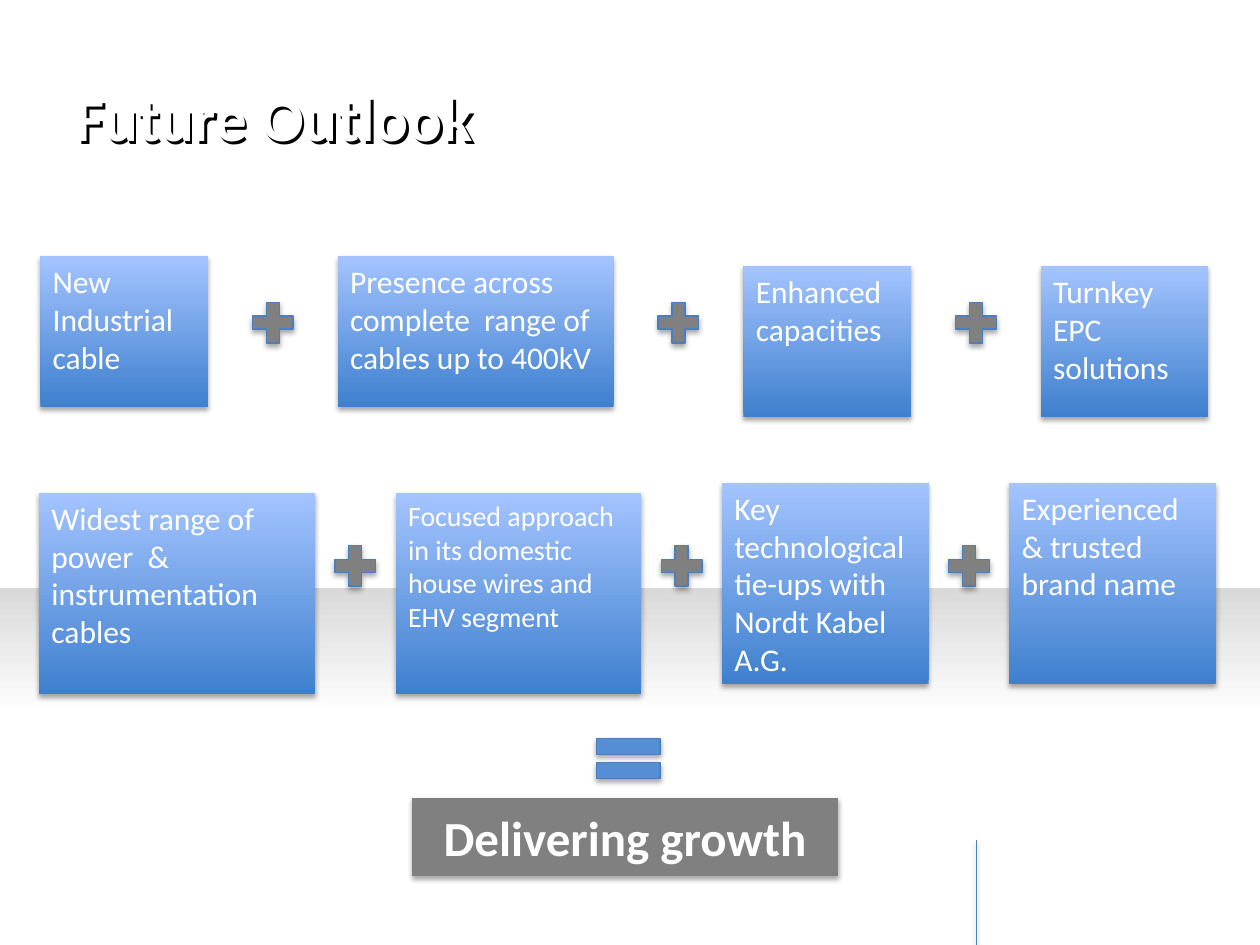
"""Build the Future Outlook slide: two rows of strengths adding up to growth."""
import pptx
import pptx.dml.color
import pptx.enum.shapes
import pptx.enum.text
import pptx.oxml
import pptx.util

RGB = pptx.dml.color.RGBColor
KIND = pptx.enum.shapes.MSO_SHAPE
ANCHOR = pptx.enum.text.MSO_ANCHOR
ALIGN = pptx.enum.text.PP_ALIGN
NS = "http://schemas.openxmlformats.org/drawingml/2006/main"

WHITE = RGB(0xFF, 0xFF, 0xFF)
PALE = RGB(0xD9, 0xD9, 0xD9)
GRAY = RGB(0x80, 0x80, 0x80)
DEEP = RGB(0x3F, 0x80, 0xCE)
LIGHT = RGB(0xA4, 0xC4, 0xFF)
BLUE = RGB(0x55, 0x8E, 0xD5)
EDGE = RGB(0x4B, 0x7E, 0xBC)
RULE = RGB(0x4F, 0x81, 0xBD)

TITLE = "Future Outlook"
RESULT = "Delivering growth"
ROWS = [
    {"left": 0.32, "top": 2.03, "high": 1.2, "gap": 1.03, "shift": 0.08, "plus": 2.34,
     "boxes": [("New Industrial cable", 1.33, 18),
               ("Presence across complete  range of cables up to 400kV", 2.19, 18),
               ("Enhanced capacities", 1.33, 18),
               ("Turnkey\nEPC solutions", 1.33, 18)]},
    {"left": 0.31, "top": 3.91, "high": 1.6, "gap": 0.64, "shift": -0.08, "plus": 4.27,
     "boxes": [("Widest range of power  & instrumentation cables", 2.19, 18),
               ("Focused approach in its domestic house wires and EHV segment", 1.95, 16),
               ("Key technological tie-ups with Nordt Kabel A.G.", 1.64, 18),
               ("Experienced & trusted brand name", 1.64, 18)]},
]
PLUS = 0.44


def shade(shape, alpha=35, blur=3.1, dist=1.8, angle=90):
    """Give a shape a black shadow."""
    props = shape.element.spPr
    old = props.find(f"{{{NS}}}effectLst")
    if old is not None:
        props.remove(old)
    props.append(pptx.oxml.parse_xml(
        f'<a:effectLst xmlns:a="{NS}"><a:outerShdw blurRad="{pptx.util.Pt(blur)}" '
        f'dist="{pptx.util.Pt(dist)}" dir="{angle * 60000}" algn="tl" rotWithShape="0">'
        f'<a:srgbClr val="000000"><a:alpha val="{alpha * 1000}"/></a:srgbClr>'
        f'</a:outerShdw></a:effectLst>'))


def blend(fill, angle, stops):
    """Fill with a two-stop gradient."""
    fill.gradient()
    fill.gradient_angle = angle
    for stop, (place, color) in zip(fill.gradient_stops, stops):
        stop.position = place
        stop.color.rgb = color


def draw(slide, kind, area, fill=None, edge=None):
    """Add a preset shape with an optional plain fill and edge."""
    shape = slide.shapes.add_shape(kind, *map(pptx.util.Inches, area))
    shape.shadow.inherit = False
    if fill is not None:
        shape.fill.solid()
        shape.fill.fore_color.rgb = fill
    if edge is None:
        shape.line.fill.background()
    else:
        shape.line.color.rgb = edge
        shape.line.width = pptx.util.Pt(0.75)
    return shape


def write(shape, text, size, anchor, align, bold=False):
    """Set white Calibri text in a shape."""
    frame = shape.text_frame
    frame.text = text
    frame.word_wrap = True
    frame.vertical_anchor = anchor
    for para in frame.paragraphs:
        para.alignment = align
        font = para.font
        font.name = "Calibri"
        font.size = pptx.util.Pt(size)
        font.bold = bold
        font.color.rgb = WHITE


def add_row(slide, row):
    """Lay out one row of boxes with a plus sign in each gap."""
    left = row["left"]
    for col, (text, wide, size) in enumerate(row["boxes"]):
        if col:
            mid = left - row["gap"] / 2
            shade(draw(slide, KIND.MATH_PLUS,
                       (mid - PLUS / 2, row["plus"], PLUS, PLUS), GRAY, EDGE))
        top = row["top"] + (row["shift"] if col > 1 else 0)
        box = draw(slide, KIND.RECTANGLE, (left, top, wide, row["high"]))
        blend(box.fill, 90, [(0, DEEP), (1, LIGHT)])
        shade(box)
        write(box, text, size, ANCHOR.TOP, ALIGN.LEFT)
        left += wide + row["gap"]


def main():
    """Assemble and save the slide."""
    deck = pptx.Presentation()
    deck.slide_width, deck.slide_height = map(pptx.util.Inches, (10, 7.5))
    slide = deck.slides.add_slide(deck.slide_layouts[5])

    band = draw(slide, KIND.RECTANGLE, (0, 4.67, 10, 2.6))
    blend(band.fill, 270, [(0, PALE), (0.39, WHITE)])
    rule = slide.shapes.add_connector(
        pptx.enum.shapes.MSO_CONNECTOR.STRAIGHT,
        *map(pptx.util.Inches, (7.75, 6.67, 7.75, 7.5)))
    rule.line.color.rgb = RULE
    rule.line.width = pptx.util.Pt(0.5)
    shade(rule, 38, 3.1, 1.6)

    title = slide.shapes.title
    title.left, title.top, title.width, title.height = map(
        pptx.util.Inches, (0.5, 0.3, 9, 1.25))
    write(title, TITLE, 36, ANCHOR.MIDDLE, ALIGN.LEFT, True)
    title.fill.background()
    shade(title, 100, 0, 2, 45)

    for row in ROWS:
        add_row(slide, row)
    shade(draw(slide, KIND.MATH_EQUAL, (4.64, 5.75, 0.69, 0.54), BLUE, EDGE))
    total = draw(slide, KIND.FLOWCHART_PROCESS, (3.27, 6.33, 3.38, 0.62), GRAY)
    shade(total)
    write(total, RESULT, 28, ANCHOR.MIDDLE, ALIGN.CENTER, True)
    deck.save("out.pptx")


if __name__ == "__main__":
    main()
